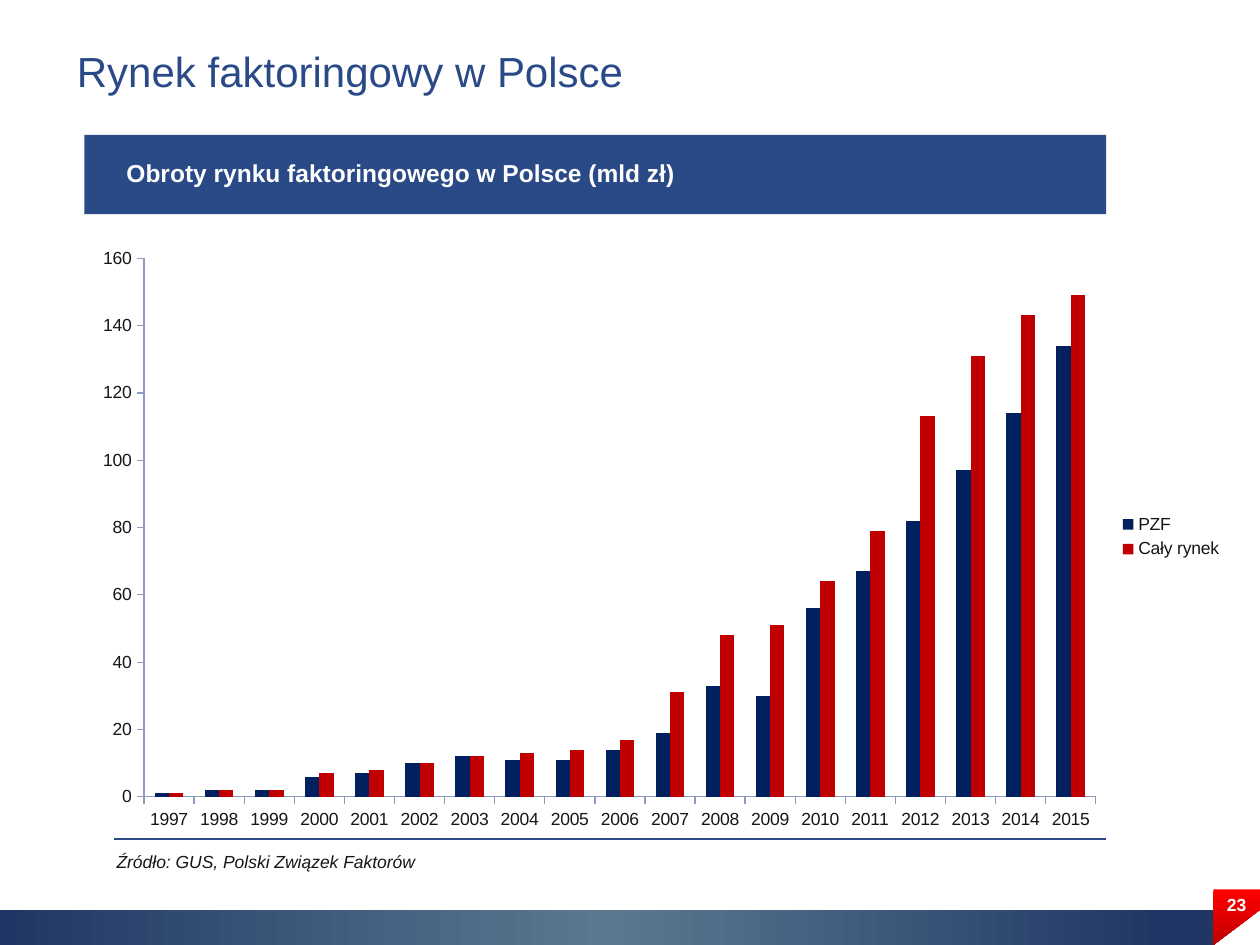
from dataclasses import dataclass
from lxml.etree import SubElement
from pptx import Presentation
from pptx.chart.data import CategoryChartData
from pptx.dml.color import RGBColor
from pptx.enum.chart import XL_CHART_TYPE, XL_LEGEND_POSITION, XL_TICK_MARK
from pptx.enum.shapes import MSO_CONNECTOR, MSO_SHAPE
from pptx.enum.text import MSO_ANCHOR, MSO_AUTO_SIZE, PP_ALIGN
from pptx.oxml.ns import qn
from pptx.util import Cm, Pt


@dataclass(frozen=True)
class Theme:
    """Colours, font and type sizes of the slide."""
    face: str = "Arial"
    blue: str = "2A4A87"
    ink: str = "161616"
    white: str = "FFFFFF"
    axis: str = "8E9ABF"
    navy: str = "002060"
    red: str = "C00000"
    band: tuple = ((4, "203765"), (50, "5B7991"), (100, "203765"))
    flag: tuple = ((0, "FF0000"), (100, "BF0000"))
    head: int = 24
    lead: int = 14
    small: int = 10


THEME = Theme()
YEARS = [str(year) for year in range(1997, 2016)]
SERIES = (
    ("PZF", THEME.navy,
     (1, 2, 2, 6, 7, 10, 12, 11, 11, 14, 19, 33, 30, 56, 67, 82, 97, 114, 134)),
    ("Cały rynek", THEME.red,
     (1, 2, 2, 7, 8, 10, 12, 13, 14, 17, 31, 48, 51, 64, 79, 113, 131, 143, 149)),
)


def rgb(code):
    """Turn a hex code into a colour."""
    return RGBColor.from_string(code)


def place(box):
    """Turn left, top, width and height in centimetres into lengths."""
    return [Cm(n) for n in box]


def style(font, size, color, bold=False, italic=False):
    """Set face, size, colour and slant of a font."""
    font.name, font.size = THEME.face, Pt(size)
    font.bold, font.italic = bold, italic
    font.color.rgb = rgb(color)


def plain(shape):
    """Take the line and the shadow off a shape."""
    shape.line.fill.background()
    shape.shadow.inherit = False


def blend(shape, stops, angle):
    """Fill a shape with a linear gradient."""
    shape.fill.gradient()
    shape.fill.gradient_angle = angle
    group = next(shape.element.iter(qn("a:gsLst")))
    for old in list(group):
        group.remove(old)
    for spot, color in stops:
        stop = SubElement(group, qn("a:gs"), pos=str(spot * 1000))
        SubElement(stop, qn("a:srgbClr"), val=color)


def add_bar(slide, box):
    """Add a plain rectangle."""
    bar = slide.shapes.add_shape(MSO_SHAPE.RECTANGLE, *place(box))
    plain(bar)
    return bar


def add_flag(slide, points):
    """Add the red corner behind the page number."""
    start, *rest = [(Cm(x), Cm(y)) for x, y in points]
    pen = slide.shapes.build_freeform(*start)
    pen.add_line_segments(rest, close=True)
    flag = pen.convert_to_shape()
    plain(flag)
    blend(flag, THEME.flag, 270)


def add_text(slide, box, text, size, color, **look):
    """Add a one-line text box and return its frame."""
    frame = slide.shapes.add_textbox(*place(box)).text_frame
    frame.word_wrap = True
    line = frame.paragraphs[0]
    line.text = text
    style(line.font, size, color, **look)
    return frame


def add_page(slide, box, text):
    """Add the centred page number."""
    frame = add_text(slide, box, text, THEME.small, THEME.white, bold=True)
    frame.margin_left = frame.margin_right = 0
    frame.margin_top = frame.margin_bottom = 0
    frame.paragraphs[0].alignment = PP_ALIGN.CENTER


def set_title(slide, box, text):
    """Place and format the title."""
    title = slide.shapes.title
    title.left, title.top, title.width, title.height = place(box)
    frame = title.text_frame
    frame.text = text
    frame.word_wrap = True
    frame.auto_size = MSO_AUTO_SIZE.NONE
    frame.vertical_anchor = MSO_ANCHOR.BOTTOM
    frame.margin_left = frame.margin_right = frame.margin_bottom = 0
    frame.margin_top = Cm(0.13)
    line = frame.paragraphs[0]
    line.alignment = PP_ALIGN.LEFT
    style(line.font, THEME.head, THEME.blue)


def add_rule(slide, left, right, top):
    """Add a thin horizontal line."""
    rule = slide.shapes.add_connector(
        MSO_CONNECTOR.STRAIGHT, Cm(left), Cm(top), Cm(right), Cm(top))
    rule.line.color.rgb = rgb(THEME.blue)
    rule.line.width = Pt(1)
    SubElement(rule.element.spPr, qn("a:effectLst"))


def set_plot(chart, **sides):
    """Fix the inner plot area as shares of the chart."""
    area = next(chart.element.iter(qn("c:plotArea")))
    for old in area.findall(qn("c:layout")):
        area.remove(old)
    layout = SubElement(area, qn("c:layout"))
    area.insert(0, layout)
    manual = SubElement(layout, qn("c:manualLayout"))
    parts = {"layoutTarget": "inner", "xMode": "edge", "yMode": "edge", **sides}
    for name, value in parts.items():
        SubElement(manual, qn("c:" + name), val=str(value))


def add_columns(slide, box):
    """Add the clustered column chart of turnover."""
    data = CategoryChartData()
    data.categories = YEARS
    for name, _, values in SERIES:
        data.add_series(name, values)
    chart = slide.shapes.add_chart(
        XL_CHART_TYPE.COLUMN_CLUSTERED, *place(box), data).chart
    style(chart.font, THEME.small, THEME.blue)
    chart.has_title = False
    chart.has_legend = True
    chart.legend.position = XL_LEGEND_POSITION.RIGHT
    chart.legend.include_in_layout = False
    style(chart.legend.font, THEME.small, THEME.ink)
    for axis in (chart.category_axis, chart.value_axis):
        axis.has_major_gridlines = False
        axis.major_tick_mark = XL_TICK_MARK.OUTSIDE
        axis.format.line.color.rgb = rgb(THEME.axis)
        style(axis.tick_labels.font, THEME.small, THEME.ink)
    scale = chart.value_axis
    scale.minimum_scale, scale.maximum_scale, scale.major_unit = 0, 160, 20
    plot = chart.plots[0]
    plot.gap_width, plot.overlap, plot.vary_by_categories = 150, 0, False
    for series, (_, color, _) in zip(plot.series, SERIES):
        series.format.fill.solid()
        series.format.fill.fore_color.rgb = rgb(color)
    set_plot(chart, x=0.06, y=0.04, w=0.82, h=0.89)


def main():
    """Build the slide and save it."""
    deck = Presentation()
    deck.slide_width, deck.slide_height = Cm(25.4), Cm(19.05)
    slide = deck.slides.add_slide(deck.slide_layouts[5])
    blend(add_bar(slide, (0, 18.34, 24.46, 0.71)), THEME.band, 180)
    add_flag(slide, ((24.46, 17.93), (25.4, 17.93), (25.4, 18.34), (24.46, 19.05)))
    set_title(slide, (1.55, 0, 19.56, 1.93), "Rynek faktoringowy w Polsce")
    add_page(slide, (24.46, 18.03, 0.94, 0.61), "23")
    banner = add_bar(slide, (1.7, 2.72, 20.6, 1.6))
    banner.fill.solid()
    banner.fill.fore_color.rgb = rgb(THEME.blue)
    add_text(slide, (2.3, 3.07, 17.4, 0.86),
             "Obroty rynku faktoringowego w Polsce (mld zł)",
             THEME.lead, THEME.white, bold=True)
    add_rule(slide, 2.3, 22.3, 16.92)
    add_text(slide, (2.1, 17.04, 21.2, 0.69), "Źródło: GUS, Polski Związek Faktorów",
             THEME.small, THEME.ink, italic=True)
    add_columns(slide, (1.5, 4.72, 23.4, 12.2))
    deck.save("out.pptx")


if __name__ == "__main__":
    main()
